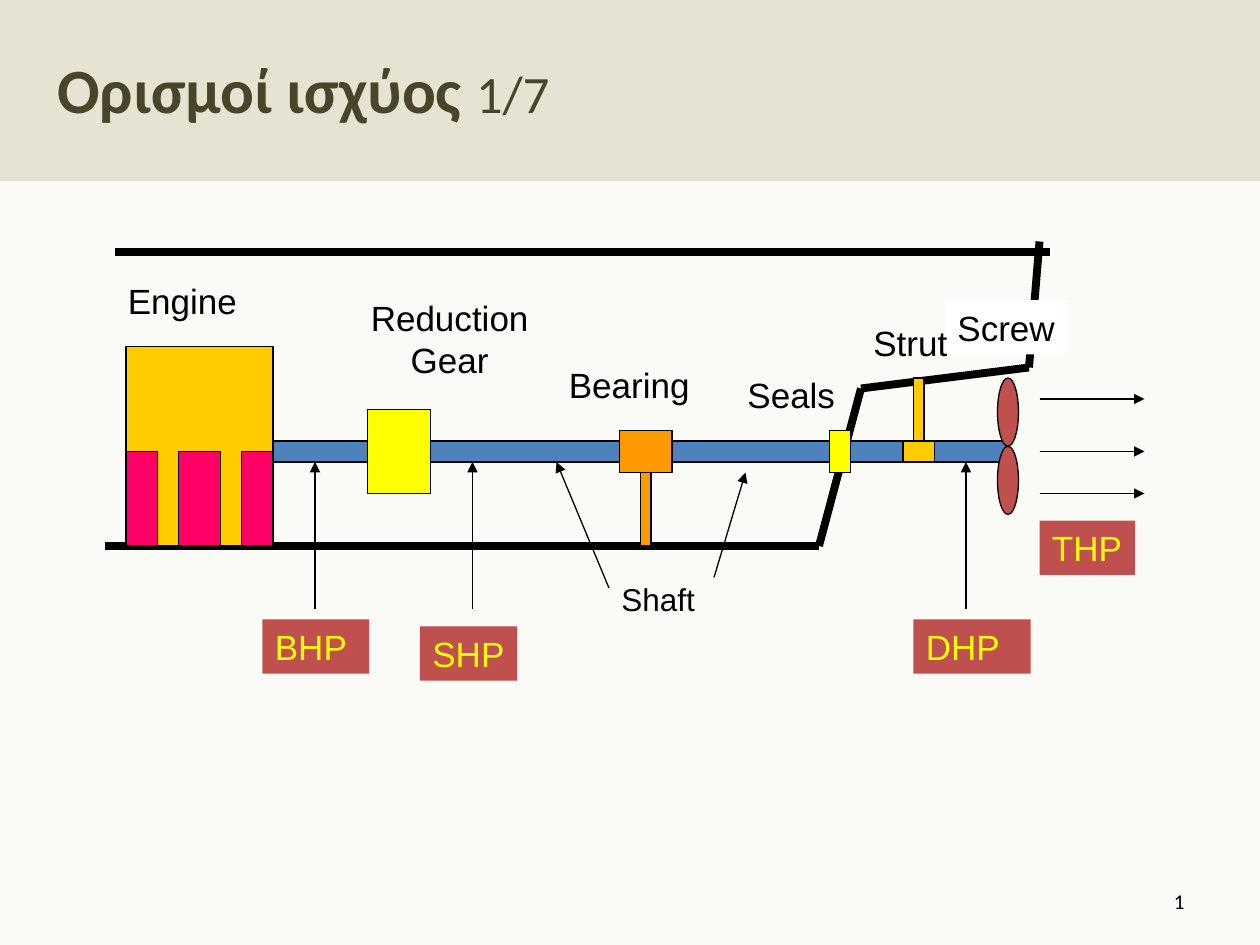
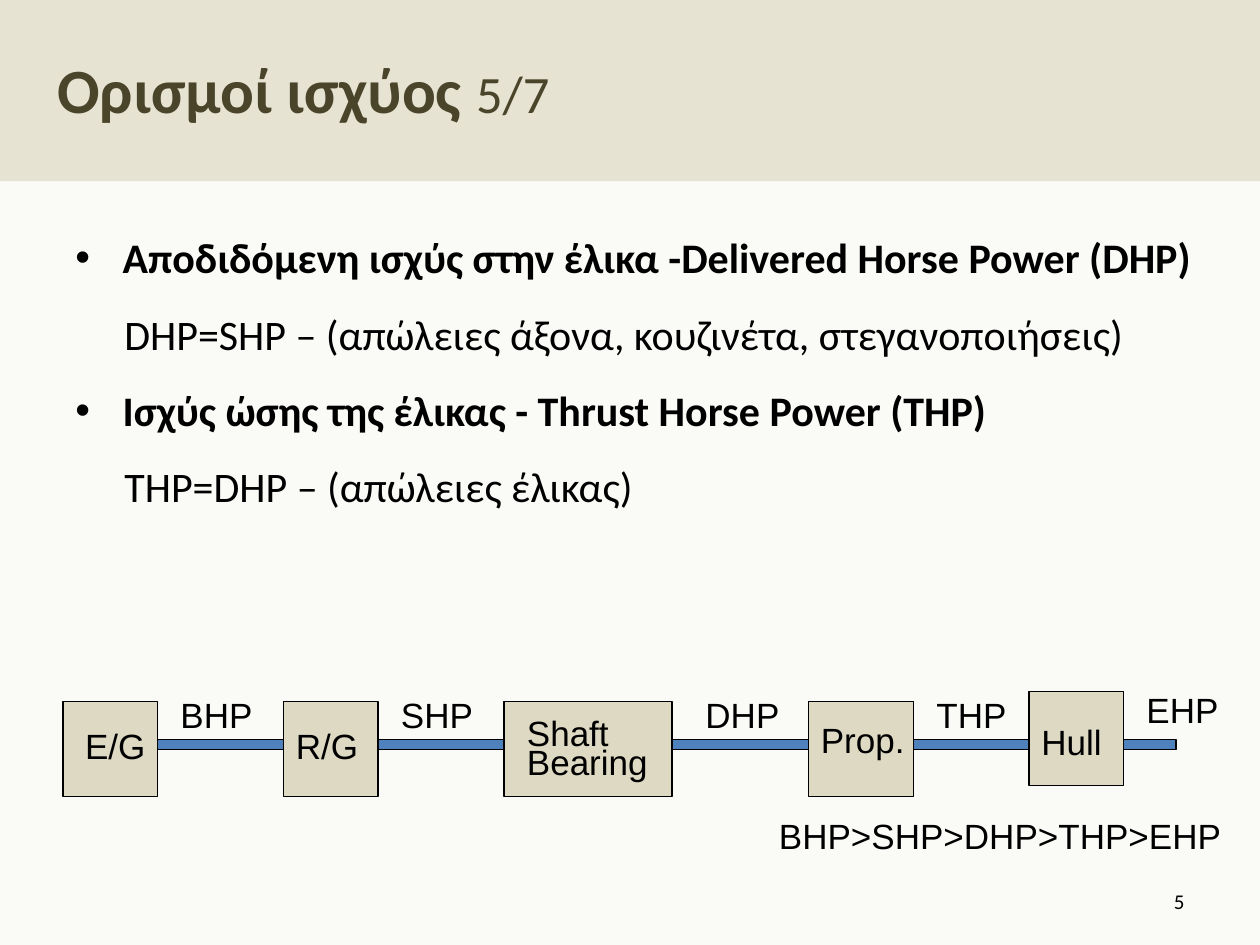
from itertools import pairwise

from lxml.etree import SubElement
from pptx import Presentation
from pptx.dml.color import RGBColor
from pptx.enum.shapes import MSO_CONNECTOR, MSO_SHAPE
from pptx.enum.text import MSO_ANCHOR, PP_ALIGN
from pptx.oxml.ns import qn
from pptx.util import Pt

PAPER = RGBColor(0xFA, 0xFA, 0xF7)
BAND = RGBColor(0xE6, 0xE3, 0xD2)
OLIVE = RGBColor(0x4A, 0x45, 0x2A)
BLACK = RGBColor(0, 0, 0)
WHITE = RGBColor(0xFF, 0xFF, 0xFF)
BLUE = RGBColor(0x4F, 0x81, 0xBD)
RED = RGBColor(0xC0, 0x50, 0x4D)
GOLD = RGBColor(0xFF, 0xCC, 0x00)
YELLOW = RGBColor(0xFF, 0xFF, 0x00)
ORANGE = RGBColor(0xFF, 0x99, 0x00)
PINK = RGBColor(0xFF, 0x00, 0x66)
TAN = RGBColor(0xDD, 0xD9, 0xC3)


class Deck:
    """Holds the shared style and the slide being drawn."""

    def __init__(self):
        self.prs = Presentation()
        self.prs.slide_width, self.prs.slide_height = Pt(720), Pt(540)
        fill = self.prs.slide_master.background.fill
        fill.solid()
        fill.fore_color.rgb = PAPER

    def slide(self, title, part, number):
        self.s = self.prs.slides.add_slide(self.prs.slide_layouts[5])
        # Band goes behind the title
        band = self.shape(0, 0, 720, 103.5, BAND, line=False)
        self.s.shapes._spTree.insert(2, band._element)
        sp = self.s.shapes.title
        sp.left, sp.top, sp.width, sp.height = Pt(25.4), Pt(7), Pt(659), Pt(87)
        tf = sp.text_frame
        tf.vertical_anchor = MSO_ANCHOR.MIDDLE
        p = tf.paragraphs[0]
        p.alignment = PP_ALIGN.LEFT
        p.font.name, p.font.color.rgb = "Calibri", OLIVE
        for text, size, bold in ((title + " ", 36, True), (part, 30, False)):
            r = p.add_run()
            r.text, r.font.size, r.font.bold = text, Pt(size), bold
        # Slide number
        tf = self.text(516, 500.5, 168, 28.5, number, size=12, font="Calibri",
                       align=PP_ALIGN.RIGHT).text_frame
        tf.vertical_anchor = MSO_ANCHOR.MIDDLE

    def shape(self, x, y, w, h, fill, kind=MSO_SHAPE.RECTANGLE, line=True):
        sp = self.s.shapes.add_shape(kind, Pt(x), Pt(y), Pt(w), Pt(h))
        sp.shadow.inherit = False
        sp.fill.solid()
        sp.fill.fore_color.rgb = fill
        if line:
            sp.line.color.rgb, sp.line.width = BLACK, Pt(0.75)
        else:
            sp.line.fill.background()
        return sp

    def line(self, start, end, width=0.75, arrow=False):
        sp = self.s.shapes.add_connector(
            MSO_CONNECTOR.STRAIGHT, *(Pt(v) for v in (*start, *end)))
        sp.line.color.rgb, sp.line.width = BLACK, Pt(width)
        if arrow:
            SubElement(sp.line._get_or_add_ln(), qn("a:tailEnd"), type="triangle")
        SubElement(sp._element.spPr, qn("a:effectLst"))

    def text(self, x, y, w, h, text, size=20, font="Arial", color=BLACK,
             fill=None, align=PP_ALIGN.LEFT, spacing=None):
        sp = self.s.shapes.add_textbox(Pt(x), Pt(y), Pt(w), Pt(h))
        if fill is not None:
            sp.fill.solid()
            sp.fill.fore_color.rgb = fill
        tf = sp.text_frame
        tf.word_wrap = True
        tf.text = text
        for p in tf.paragraphs:
            p.alignment, p.line_spacing = align, spacing
            p.font.size, p.font.name, p.font.color.rgb = Pt(size), font, color
        return sp

    def definitions(self, x, y, w, h, pairs):
        """Bold bulleted terms, each followed by its indented formula."""
        lines = [text for pair in pairs for text in pair]
        sp = self.text(x, y, w, h, "\n".join(lines), size=24, font="Calibri",
                       spacing=1.1)
        for i, p in enumerate(sp.text_frame.paragraphs):
            is_term = i % 2 == 0
            p.space_before, p.font.bold = Pt(12), is_term
            pPr = p._p.get_or_add_pPr()
            pPr.set("marL", str(Pt(27 if is_term else 28)))
            pPr.set("indent", str(Pt(-27 if is_term else 0)))
            if is_term:
                bullet = pPr.makeelement(qn("a:buFont"), {"typeface": "Arial"})
                char = pPr.makeelement(qn("a:buChar"), {"char": "•"})
                at = list(pPr).index(pPr.find(qn("a:defRPr")))
                pPr[at:at] = [bullet, char]


def propulsion_slide(deck):
    deck.slide("Ορισμοί ισχύος", "1/7", "1")

    # Hull outline
    deck.line((66, 144), (600, 144), 4.5)
    stern = [(594, 138), (588, 210), (492, 222), (468, 312), (60, 312)]
    for start, end in pairwise(stern):
        deck.line(start, end, 4.5)

    # Machinery along the shaft
    for x, y, w, h, color in (
        (72, 198, 84, 114, GOLD),       # engine
        (156, 252, 420, 12, BLUE),      # shaft
        (210, 234, 36, 48, YELLOW),     # reduction gear
        (474, 246, 12, 24, YELLOW),     # seals
        (354, 246, 30, 24, ORANGE),     # bearing
        (522, 216, 6, 36, GOLD),        # strut
        (516, 252, 18, 12, GOLD),       # strut foot
        (366, 270, 6, 42, ORANGE),      # bearing post
    ):
        deck.shape(x, y, w, h, color)
    for y in (216, 255):
        deck.shape(570, y, 12, 39, RED, MSO_SHAPE.OVAL)
    for x, w in ((72, 18), (102, 24), (138, 18)):
        deck.shape(x, 258, w, 54, PINK)

    # Part names
    deck.text(66, 156, 94, 31, "Engine")
    deck.text(196, 166, 122, 55, "Reduction\nGear", align=PP_ALIGN.CENTER)
    deck.text(318, 204, 91, 31, "Bearing")
    deck.text(420, 210, 65, 31, "Seals")
    deck.text(540, 171.5, 70, 31, "Screw", fill=WHITE)
    deck.text(492, 180, 61, 31, "Strut")
    deck.text(348, 328, 85, 41, "Shaft", size=18)

    # Power labels
    for x, y, w, name in ((150, 354, 61, "BHP"), (240, 358, 55.5, "SHP"),
                          (522, 354, 67, "DHP"), (594, 297.5, 54.5, "THP")):
        deck.text(x, y, w, 31, name, color=YELLOW, fill=RED)

    # Arrows to the shaft and thrust arrows
    for x in (180, 270, 552):
        deck.line((x, 348), (x, 264), arrow=True)
    for y in (228, 258, 282):
        deck.line((594, y), (654, y), arrow=True)
    deck.line((348, 336), (318, 264), arrow=True)
    deck.line((408, 330), (426, 270), arrow=True)


def power_chain_slide(deck):
    deck.slide("Ορισμοί ισχύος", "5/7", "5")
    deck.definitions(36, 126, 667.5, 401, (
        ("Αποδιδόμενη ισχύς στην έλικα -Delivered Horse Power (DHP)",
         "DHP=SHP – (απώλειες άξονα, κουζινέτα, στεγανοποιήσεις)"),
        ("Ισχύς ώσης της έλικας - Thrust Horse Power (THP)",
         "THP=DHP – (απώλειες έλικας)"),
    ))

    # Shaft and the stages on it
    deck.shape(90, 422.5, 582, 6, BLUE)
    for x, y, w in ((36, 401, 54), (162, 401, 54), (288, 401, 96),
                    (462, 401, 60), (588, 395, 54)):
        deck.shape(x, y, w, 54, TAN)

    # Stage names and the power between stages, with room for one line each
    for x, y, w, name in (
        (41.5, 410.5, 54, "E/G"), (162, 410.5, 54, "R/G"),
        (462, 407, 66, "Prop."), (588, 408, 54, "Hull"),
        (96, 392.5, 60, "BHP"), (222, 392.5, 60, "SHP"),
        (396, 392.5, 60, "DHP"), (528, 392.5, 60, "THP"),
        (648, 390, 60, "EHP"), (438, 462, 275, "BHP>SHP>DHP>THP>ΕΗΡ"),
    ):
        deck.text(x, y, w, 31, name)
    deck.text(294, 409.5, 90, 41, "Shaft\nBearing", spacing=0.7)


def main():
    deck = Deck()
    propulsion_slide(deck)
    power_chain_slide(deck)
    deck.prs.save("out.pptx")


if __name__ == "__main__":
    main()
